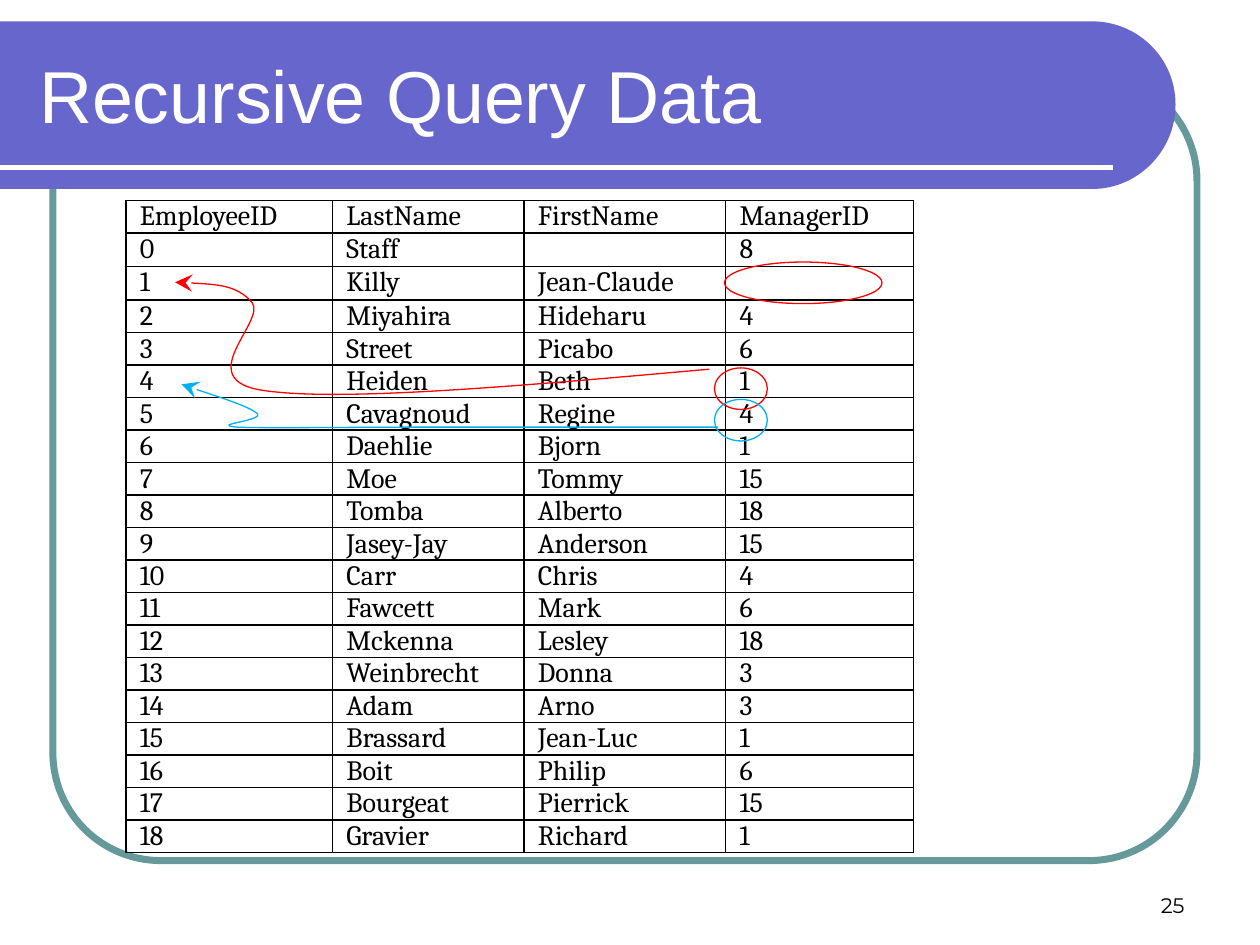
from dataclasses import dataclass

from lxml import etree
from pptx import Presentation
from pptx.dml.color import RGBColor
from pptx.enum.shapes import MSO_CONNECTOR, MSO_SHAPE
from pptx.enum.text import MSO_ANCHOR, PP_ALIGN
from pptx.oxml.ns import qn
from pptx.util import Inches, Pt

LEFT, RIGHT = PP_ALIGN.LEFT, PP_ALIGN.RIGHT
MIDDLE, BOTTOM = MSO_ANCHOR.MIDDLE, MSO_ANCHOR.BOTTOM
OVAL, ROUND = MSO_SHAPE.OVAL, MSO_SHAPE.ROUNDED_RECTANGLE
STRAIGHT = MSO_CONNECTOR.STRAIGHT


@dataclass(frozen=True)
class Theme:
    band: str = "6666CC"
    frame: str = "669999"
    white: str = "FFFFFF"
    black: str = "000000"
    red: str = "FF0000"
    blue: str = "00B0F0"
    title: int = 42
    cell: int = 16
    lead: float = 18.5
    page: int = 12
    thin: float = 0.75


@dataclass(frozen=True)
class Ring:
    left: float
    top: float
    width: float
    color: str


@dataclass(frozen=True)
class Curve:
    """A start point, then steps of one point (line) or three (cubic)."""
    start: tuple
    steps: tuple
    color: str


THEME = Theme()
COLS = (1.64, 1.52, 1.6, 1.49)
ROWS = [
    ("EmployeeID", "LastName", "FirstName", "ManagerID"),
    ("0", "Staff", "", "8"),
    ("1", "Killy", "Jean-Claude", ""),
    ("2", "Miyahira", "Hideharu", "4"),
    ("3", "Street", "Picabo", "6"),
    ("4", "Heiden", "Beth", "1"),
    ("5", "Cavagnoud", "Regine", "4"),
    ("6", "Daehlie", "Bjorn", "1"),
    ("7", "Moe", "Tommy", "15"),
    ("8", "Tomba", "Alberto", "18"),
    ("9", "Jasey-Jay", "Anderson", "15"),
    ("10", "Carr", "Chris", "4"),
    ("11", "Fawcett", "Mark", "6"),
    ("12", "Mckenna", "Lesley", "18"),
    ("13", "Weinbrecht", "Donna", "3"),
    ("14", "Adam", "Arno", "3"),
    ("15", "Brassard", "Jean-Luc", "1"),
    ("16", "Boit", "Philip", "6"),
    ("17", "Bourgeat", "Pierrick", "15"),
    ("18", "Gravier", "Richard", "1"),
]
RINGS = [
    Ring(5.75, 2.08, 1.25, THEME.red),
    Ring(5.67, 2.92, 0.42, THEME.red),
    Ring(5.67, 3.17, 0.42, THEME.blue),
]
LINKS = [
    Curve((5.63, 2.93), (
        ((4.17, 3.06), (2.71, 3.19), (2.1, 3.1)),
        ((1.5, 3.02), (2.12, 2.55), (2, 2.4)),
        ((1.88, 2.26), (1.63, 2.25), (1.39, 2.24)),
    ), THEME.red),
    Curve((5.7, 3.39), (
        ((3.39, 3.39),),
        ((2.75, 3.39), (2.1, 3.4), (1.88, 3.39)),
        ((1.65, 3.37), (2.11, 3.34), (2.04, 3.28)),
        ((1.96, 3.22), (1.7, 3.14), (1.44, 3.05)),
    ), THEME.blue),
]
BAND = Curve((0, 0.17), (
    ((8.67, 0.17),),
    ((9.03, 0.17), (9.33, 0.46), (9.33, 0.83)),
    ((9.33, 1.2), (9.03, 1.5), (8.67, 1.5)),
    ((0, 1.5),),
), THEME.band)


def rgb(color: str) -> RGBColor:
    return RGBColor.from_string(color)


def stroke(shape, color: str, width: float) -> None:
    shape.line.color.rgb = rgb(color)
    shape.line.width = Pt(width)


def put(frame, text: str, font: str, size: int, color: str, form: dict) -> None:
    for name, value in form.items():
        setattr(frame, name, value)
    run = frame.paragraphs[0].add_run()
    run.text = text
    look = {"name": font, "size": Pt(size), "bold": False}
    for name, value in look.items():
        setattr(run.font, name, value)
    run.font.color.rgb = rgb(color)


def trace(shapes, curve: Curve, close: bool):
    """Build the outline from lines, then join threes into cubics."""
    x, y = curve.start
    pen = shapes.build_freeform(Inches(x), Inches(y))
    spots = [(Inches(a), Inches(b)) for step in curve.steps for a, b in step]
    pen.add_line_segments(spots, close)
    shape = pen.convert_to_shape()
    shape.shadow.inherit = False
    lines = iter(list(shape._element.iter(qn("a:lnTo"))))
    for step in curve.steps:
        group = [next(lines) for _ in step]
        if len(group) == 3:
            cubic = etree.Element(qn("a:cubicBezTo"))
            group[0].addprevious(cubic)
            for line in group:
                cubic.append(line[0])
                line.getparent().remove(line)
    return shape


def draw_ring(shapes, ring: Ring) -> None:
    shape = shapes.add_shape(OVAL, Inches(ring.left), Inches(ring.top),
                             Inches(ring.width), Inches(0.33))
    shape.shadow.inherit = False
    shape.fill.background()
    stroke(shape, ring.color, THEME.thin)


def draw_link(shapes, curve: Curve) -> None:
    shape = trace(shapes, curve, False)
    shape.fill.background()
    stroke(shape, curve.color, THEME.thin)
    etree.SubElement(shape.line._get_or_add_ln(), qn("a:tailEnd"),
                     type="stealth", w="lg", len="lg")


def edge(cell) -> None:
    props = cell._tc.get_or_add_tcPr()
    for side in ("lnL", "lnR", "lnT", "lnB"):
        line = etree.SubElement(props, qn(f"a:{side}"), w=str(Pt(1)))
        fill = etree.SubElement(line, qn("a:solidFill"))
        etree.SubElement(fill, qn("a:srgbClr"), val=THEME.black)


def draw_table(shapes) -> None:
    tall = Inches(5.16)
    table = shapes.add_table(len(ROWS), len(COLS), Inches(1), Inches(1.59),
                             Inches(sum(COLS)), tall).table
    table.first_row = table.horz_banding = False
    for col, width in zip(table.columns, COLS):
        col.width = Inches(width)
    pads = {"margin_left": Inches(0.11), "margin_right": Inches(0.11),
            "margin_top": 0, "margin_bottom": 0}
    for r, words in enumerate(ROWS):
        table.rows[r].height = tall // len(ROWS)
        for c, word in enumerate(words):
            cell = table.cell(r, c)
            edge(cell)
            cell.fill.background()
            for name, value in pads.items():
                setattr(cell, name, value)
            para = cell.text_frame.paragraphs[0]
            para.alignment = LEFT
            para.line_spacing = Pt(THEME.lead)
            if word:
                put(cell.text_frame, word, "Cambria", THEME.cell, THEME.black, {})
            else:  # keeps an empty row as low as the others
                para._p.get_or_add_endParaRPr().set("sz", str(THEME.cell * 100))


def main() -> None:
    deck = Presentation()
    deck.slide_width, deck.slide_height = Inches(10), Inches(7.5)
    slide = deck.slides.add_slide(deck.slide_layouts[5])
    shapes = slide.shapes

    # Frame, band and rule behind the title
    frame = shapes.add_shape(ROUND, Inches(0.42), Inches(0.58),
                             Inches(9.08), Inches(6.25))
    frame.adjustments[0] = 0.137
    frame.shadow.inherit = False
    frame.fill.background()
    stroke(frame, THEME.frame, 4)
    band = trace(shapes, BAND, True)
    band.fill.solid()
    band.fill.fore_color.rgb = rgb(BAND.color)
    band.line.fill.background()
    rule = shapes.add_connector(STRAIGHT, 0, Inches(1.33), Inches(8.83), Inches(1.33))
    stroke(rule, THEME.white, 3)
    etree.SubElement(rule._element.spPr, qn("a:effectLst"))

    # Title, brought in front of the band
    title = shapes.title
    place = {"left": 0.21, "top": 0.25, "width": 8.77, "height": 1}
    for name, value in place.items():
        setattr(title, name, Inches(value))
    put(title.text_frame, "Recursive Query Data", "Arial", THEME.title, THEME.white,
        {"vertical_anchor": MIDDLE, "word_wrap": True})
    title.text_frame.paragraphs[0].alignment = LEFT
    rule._element.addnext(title._element)

    # Page number
    page = shapes.add_textbox(Inches(7.17), Inches(6.83), Inches(2.33), Inches(0.5))
    put(page.text_frame, "25", "Montserrat", THEME.page, THEME.black,
        {"vertical_anchor": BOTTOM, "word_wrap": True})
    page.text_frame.paragraphs[0].alignment = RIGHT

    # Table with its marks
    draw_table(shapes)
    for ring in RINGS:
        draw_ring(shapes, ring)
    for link in LINKS:
        draw_link(shapes, link)

    deck.save("out.pptx")


if __name__ == "__main__":
    main()
